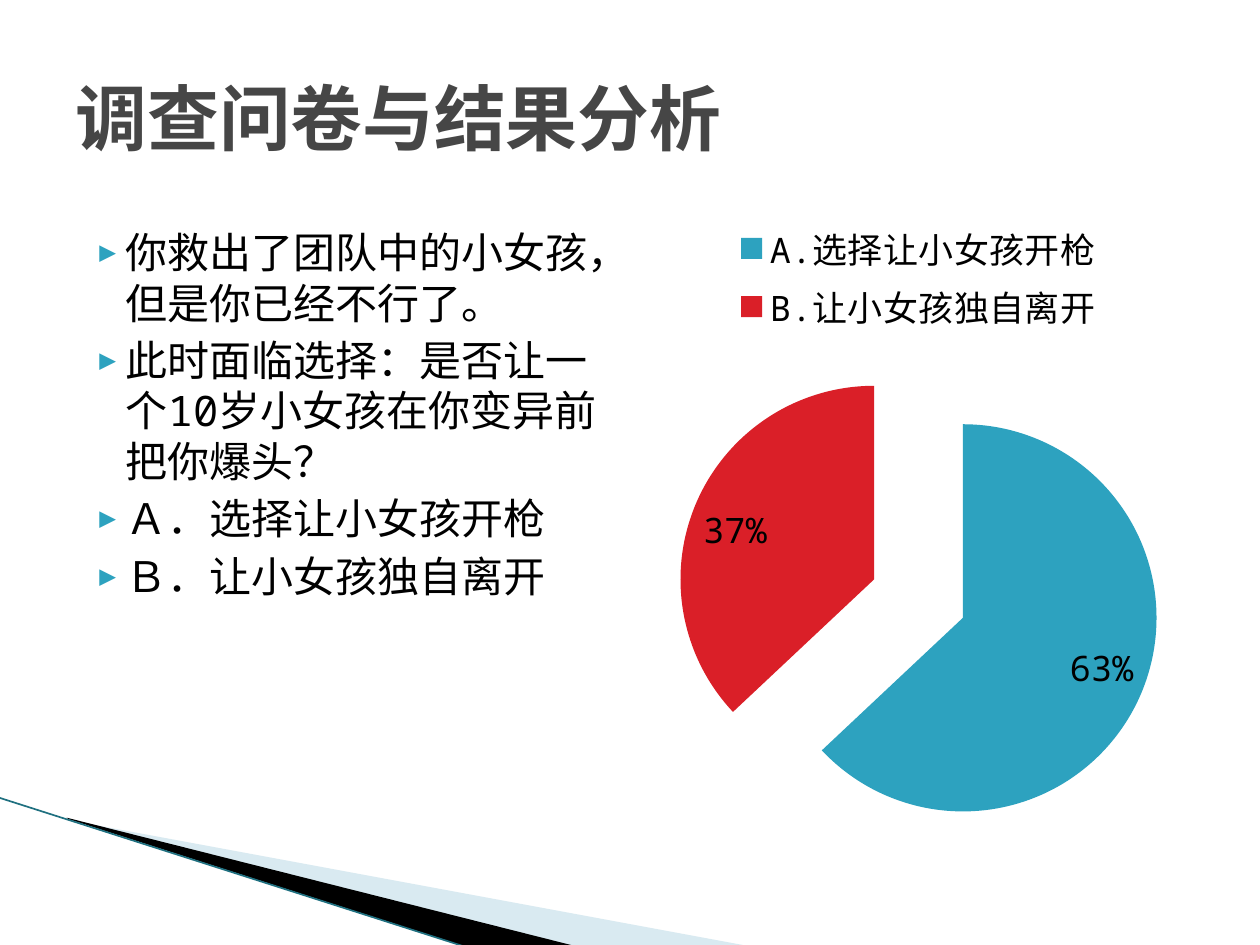
from dataclasses import dataclass

from lxml.etree import SubElement
from pptx import Presentation
from pptx.chart.data import CategoryChartData
from pptx.dml.color import RGBColor
from pptx.enum.chart import XL_CHART_TYPE as ChartType
from pptx.enum.chart import XL_LABEL_POSITION as LabelPosition
from pptx.enum.chart import XL_LEGEND_POSITION as LegendPosition
from pptx.enum.shapes import MSO_CONNECTOR as Connector
from pptx.enum.text import MSO_ANCHOR as Anchor
from pptx.enum.text import PP_ALIGN as Align
from pptx.oxml.ns import qn
from pptx.util import Inches, Pt


@dataclass(frozen=True)
class Theme:
    font: str = "Noto Sans Mono"
    title: str = "464646"
    text: str = "000000"
    teal: str = "2DA2BF"
    red: str = "DA1F28"
    pale: str = "A0CBDC"
    edge: str = "1F7080"
    title_size: float = 41
    body_size: float = 24
    chart_size: float = 20


@dataclass(frozen=True)
class Wedge:
    points: tuple[tuple[float, float], ...]
    color: str
    opacity: int = 100


@dataclass(frozen=True)
class Answer:
    label: str
    percent: int
    color: str


THEME = Theme()
WEDGES = (
    Wedge(((0.55, 6.51), (5.95, 7.51), (4.56, 7.51), (0.55, 6.5)), THEME.pale, 40),
    Wedge(((0.53, 6.49), (4.57, 7.51), (3.72, 7.52), (0.54, 6.5)), THEME.text),
)
BULLETS = (
    "你救出了团队中的小女孩，但是你已经不行了。",
    "此时面临选择：是否让一个10岁小女孩在你变异前把你爆头？",
    "Ａ．选择让小女孩开枪",
    "Ｂ．让小女孩独自离开",
)
ANSWERS = (
    Answer("A.选择让小女孩开枪", 63, THEME.teal),
    Answer("B.让小女孩独自离开", 37, THEME.red),
)


def rgb(color: str) -> RGBColor:
    return RGBColor.from_string(color)


def style_font(font, size: float, color: str, bold: bool = False) -> None:
    font.name, font.size, font.bold = THEME.font, Pt(size), bold
    font.color.rgb = rgb(color)


def add_span(para, text: str, size: float, color: str, bold: bool = False) -> None:
    span = para.add_run()
    span.text = text
    style_font(span.font, size, color, bold)
    east_asian = SubElement(span.font._element, qn("a:ea"))
    east_asian.set("typeface", THEME.font)


def add_wedge(page, wedge: Wedge) -> None:
    start, *rest = [(Inches(x), Inches(y)) for x, y in wedge.points]
    builder = page.shapes.build_freeform(*start)
    builder.add_line_segments(rest)
    shape = builder.convert_to_shape()
    shape.shadow.inherit = False
    shape.line.fill.background()
    shape.fill.solid()
    shape.fill.fore_color.rgb = rgb(wedge.color)
    if wedge.opacity < 100:
        color = shape._element.spPr.find(".//" + qn("a:srgbClr"))
        SubElement(color, qn("a:alpha")).set("val", str(wedge.opacity * 1000))


def add_edge(page) -> None:
    edge = page.shapes.add_connector(
        Connector.STRAIGHT, Inches(-0.01), Inches(6.33), Inches(3.71), Inches(7.52))
    edge.line.color.rgb = rgb(THEME.edge)
    edge.line.width = Pt(0.95)
    SubElement(edge._element.spPr, qn("a:effectLst"))


def fill_title(page) -> None:
    title = page.shapes.title
    title.left, title.top = Inches(0.5), Inches(0.3)
    title.width, title.height = Inches(9), Inches(1.25)
    frame = title.text_frame
    frame.vertical_anchor = Anchor.MIDDLE
    para = frame.paragraphs[0]
    para.alignment = Align.LEFT
    add_span(para, "调查问卷与结果分析", THEME.title_size, THEME.title, True)


def add_bullet_mark(para) -> None:
    props = para._p.get_or_add_pPr()
    props.set("marL", str(Inches(0.4)))
    props.set("indent", str(Inches(-0.28)))
    color = SubElement(props, qn("a:buClr"))
    SubElement(color, qn("a:srgbClr")).set("val", THEME.teal)
    SubElement(props, qn("a:buSzPct")).set("val", "68000")
    SubElement(props, qn("a:buFont")).set("typeface", THEME.font)
    SubElement(props, qn("a:buChar")).set("char", "▶")


def add_question(page) -> None:
    box = page.shapes.add_textbox(Inches(0.5), Inches(1.75), Inches(4.42), Inches(4.95))
    frame = box.text_frame
    frame.word_wrap = True
    for index, text in enumerate(BULLETS):
        para = frame.add_paragraph() if index else frame.paragraphs[0]
        add_bullet_mark(para)
        para.space_before = Pt(4 if index else 0)
        add_span(para, text, THEME.body_size, THEME.text)


def add_results(page) -> None:
    data = CategoryChartData()
    data.categories = [answer.label for answer in ANSWERS]
    data.add_series("Series 1", [answer.percent for answer in ANSWERS])
    chart = page.shapes.add_chart(
        ChartType.PIE, Inches(4.97), Inches(1.64), Inches(4.64), Inches(5.17), data).chart
    chart.has_title = False
    style_font(chart.font, 18, THEME.text)
    chart.has_legend = True
    chart.legend.position = LegendPosition.TOP
    chart.legend.include_in_layout = False
    style_font(chart.legend.font, THEME.chart_size, THEME.text)

    plot = chart.plots[0]
    plot.vary_by_categories = True
    series = plot.series[0]
    for index, answer in enumerate(ANSWERS):
        fill = series.points[index].format.fill
        fill.solid()
        fill.fore_color.rgb = rgb(answer.color)

    # Pull the slices apart
    explosion = SubElement(series._element, qn("c:explosion"))
    explosion.set("val", "25")
    series._element.find(qn("c:dPt")).addprevious(explosion)

    labels = series.data_labels
    labels.show_percentage, labels.show_value = True, False
    labels.number_format, labels.number_format_is_linked = "0%", False
    labels.position = LabelPosition.INSIDE_END
    style_font(labels.font, THEME.chart_size, THEME.text)


def main() -> None:
    deck = Presentation()
    deck.slide_width, deck.slide_height = Inches(10), Inches(7.5)
    page = deck.slides.add_slide(deck.slide_layouts[5])
    # Corner decoration
    for wedge in WEDGES:
        add_wedge(page, wedge)
    add_edge(page)
    # Content
    fill_title(page)
    add_question(page)
    add_results(page)
    deck.save("out.pptx")


if __name__ == "__main__":
    main()
